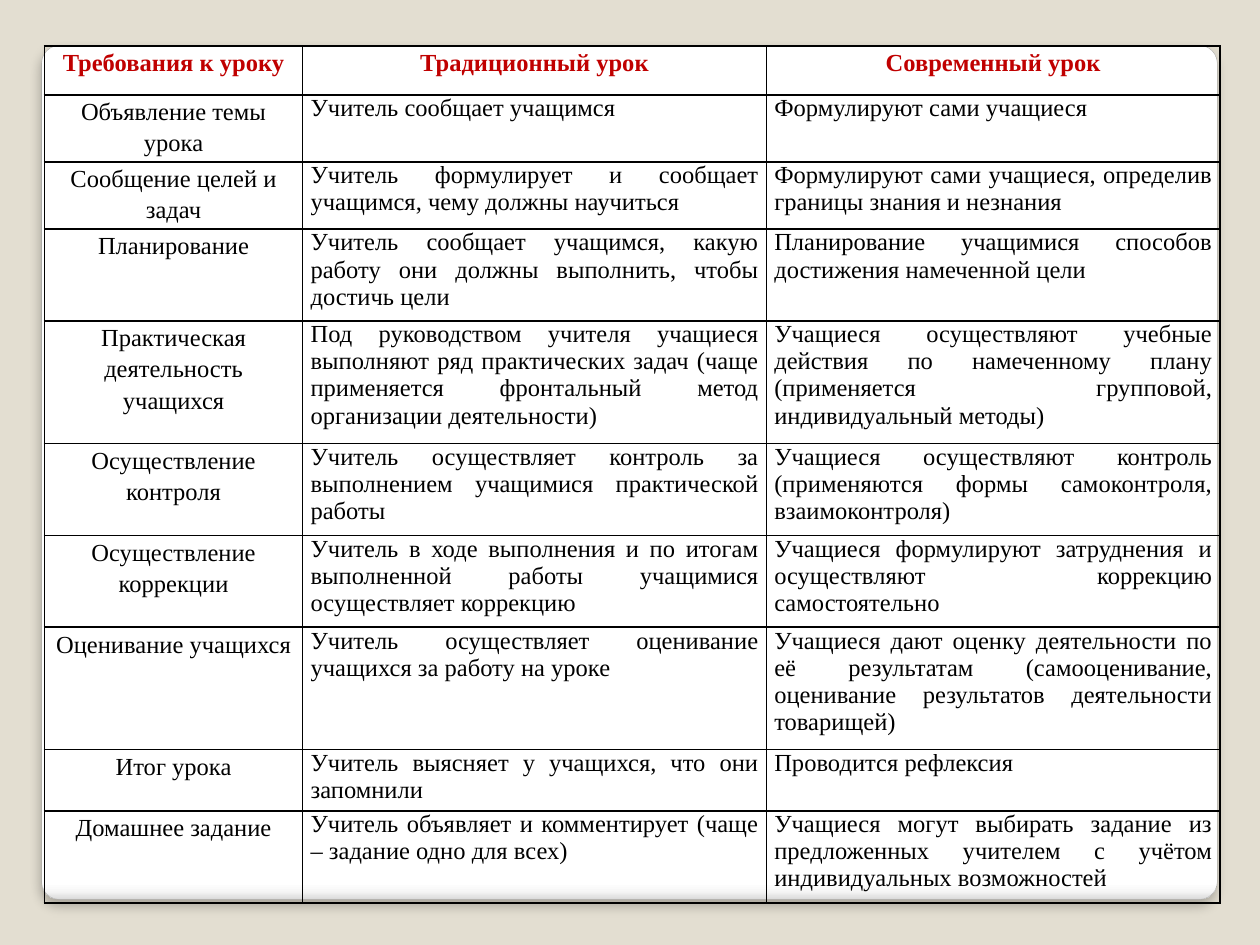
"""Build a slide comparing traditional and modern lessons."""
from typing import NamedTuple

from lxml.etree import SubElement as Sub
from pptx import Presentation
from pptx.dml.color import RGBColor
from pptx.enum.shapes import MSO_SHAPE as Shape
from pptx.enum.text import PP_ALIGN as Align
from pptx.oxml import parse_xml
from pptx.oxml.ns import nsdecls, qn
from pptx.util import Pt

FONT = "Times New Roman"
INK, RED = "000000", "C00000"
COLS = (147.6, 265, 259.2)
MID = {"alignment": Align.CENTER, "line_spacing": 1.15, "space_after": Pt(10)}
FULL = {"alignment": Align.JUSTIFY, "space_after": Pt(10)}
EDGE = {"margin_left": Pt(4.5), "margin_right": Pt(4.5), "margin_top": 0, "margin_bottom": 0}
STOPS = ((0, "FFFFFF"), (98, "FFFFFF"), (99, "F7F7F7"), (100, "DADADA"))


class Row(NamedTuple):
    """One table row: height in points and three texts."""
    high: float
    need: str
    old: str
    new: str


ROWS = (
    Row(28, "Требования к уроку", "Традиционный урок", "Современный урок"),
    Row(38.4, "Объявление темы урока", "Учитель сообщает учащимся",
        "Формулируют сами учащиеся"),
    Row(38.4, "Сообщение целей и задач",
        "Учитель формулирует и сообщает учащимся, чему должны научиться",
        "Формулируют сами учащиеся, определив границы знания и незнания"),
    Row(52.5, "Планирование",
        "Учитель сообщает учащимся, какую работу они должны выполнить, чтобы достичь цели",
        "Планирование учащимися способов достижения намеченной цели"),
    Row(70, "Практическая деятельность учащихся",
        "Под руководством учителя учащиеся выполняют ряд практических задач "
        "(чаще применяется фронтальный метод организации деятельности)",
        "Учащиеся осуществляют учебные действия по намеченному плану "
        "(применяется групповой, индивидуальный методы)"),
    Row(52.5, "Осуществление контроля",
        "Учитель осуществляет контроль за выполнением учащимися практической работы",
        "Учащиеся осуществляют контроль (применяются формы самоконтроля, взаимоконтроля)"),
    Row(52.5, "Осуществление коррекции",
        "Учитель в ходе выполнения и по итогам выполненной работы учащимися "
        "осуществляет коррекцию",
        "Учащиеся формулируют затруднения и осуществляют коррекцию самостоятельно"),
    Row(70, "Оценивание учащихся",
        "Учитель осуществляет оценивание учащихся за работу на уроке",
        "Учащиеся дают оценку деятельности по её результатам (самооценивание, "
        "оценивание результатов деятельности товарищей)"),
    Row(35, "Итог урока", "Учитель выясняет у учащихся, что они запомнили",
        "Проводится рефлексия"),
    Row(52.5, "Домашнее задание",
        "Учитель объявляет и комментирует (чаще – задание одно для всех)",
        "Учащиеся могут выбирать задание из предложенных учителем с учётом "
        "индивидуальных возможностей"),
)


def tint(code: str) -> RGBColor:
    """Turn a hex string into a colour."""
    return RGBColor.from_string(code)


def style(item: object, look: dict) -> None:
    """Set each format value on an item."""
    for name, value in look.items():
        setattr(item, name, value)


def panel(slide) -> None:
    """Draw the white rounded panel with its gradient and shadow."""
    box = slide.shapes.add_shape(Shape.ROUNDED_RECTANGLE, Pt(23.8), Pt(26), Pt(671.8), Pt(488))
    box.adjustments[0] = 0.021
    box.line.color.rgb = tint("A4A4A4")
    box.line.width = Pt(0.16)
    box.fill.gradient()
    grad = box.fill._fill._gradFill
    stops = "".join(f'<a:gs pos="{at * 1000}"><a:srgbClr val="{code}"/></a:gs>'
                    for at, code in STOPS)
    grad.replace(grad.find(qn("a:gsLst")),
                 parse_xml(f'<a:gsLst {nsdecls("a")}>{stops}</a:gsLst>'))
    grad.find(qn("a:lin")).set("ang", "5400000")
    box.shadow.inherit = False
    glow = Sub(box._element.spPr.find(qn("a:effectLst")), qn("a:outerShdw"),
               blurRad=str(Pt(6)), dist=str(Pt(4)), dir="5400000", rotWithShape="0")
    Sub(Sub(glow, qn("a:srgbClr"), val=INK), qn("a:alpha"), val="25000")


def frame(cell) -> None:
    """Give a cell black borders and no fill."""
    props = cell._tc.get_or_add_tcPr()
    for side in ("lnL", "lnR", "lnT", "lnB"):
        line = Sub(props, qn(f"a:{side}"), w=str(Pt(1)))
        Sub(Sub(line, qn("a:solidFill")), qn("a:srgbClr"), val=INK)
    cell.fill.background()


def write(cell, text: str, head: bool, mid: bool) -> None:
    """Put formatted text into a cell."""
    style(cell, EDGE)
    para = cell.text_frame.paragraphs[0]
    style(para, MID if mid else FULL)
    run = para.add_run()
    run.text = text
    style(run.font, {"name": FONT, "size": Pt(14), "bold": head})
    run.font.color.rgb = tint(RED if head else INK)


def grid(slide) -> None:
    """Draw the comparison table."""
    high = sum(row.high for row in ROWS)
    table = slide.shapes.add_table(len(ROWS), len(COLS), Pt(25.4), Pt(26.2),
                                   Pt(sum(COLS)), Pt(high)).table
    style(table, {"first_row": False, "horz_banding": False})
    for col, wide in zip(table.columns, COLS):
        col.width = Pt(wide)
    for r, row in enumerate(ROWS):
        table.rows[r].height = Pt(row.high)
        for c, text in enumerate(row[1:]):
            cell = table.cell(r, c)
            frame(cell)
            write(cell, text, r == 0, r == 0 or c == 0)


def main() -> None:
    """Build and save the deck."""
    deck = Presentation()
    style(deck, {"slide_width": Pt(720), "slide_height": Pt(540)})
    slide = deck.slides.add_slide(deck.slide_layouts[6])
    fill = slide.background.fill
    fill.solid()
    fill.fore_color.rgb = tint("E3DED1")
    panel(slide)
    grid(slide)
    deck.save("out.pptx")


if __name__ == "__main__":
    main()
